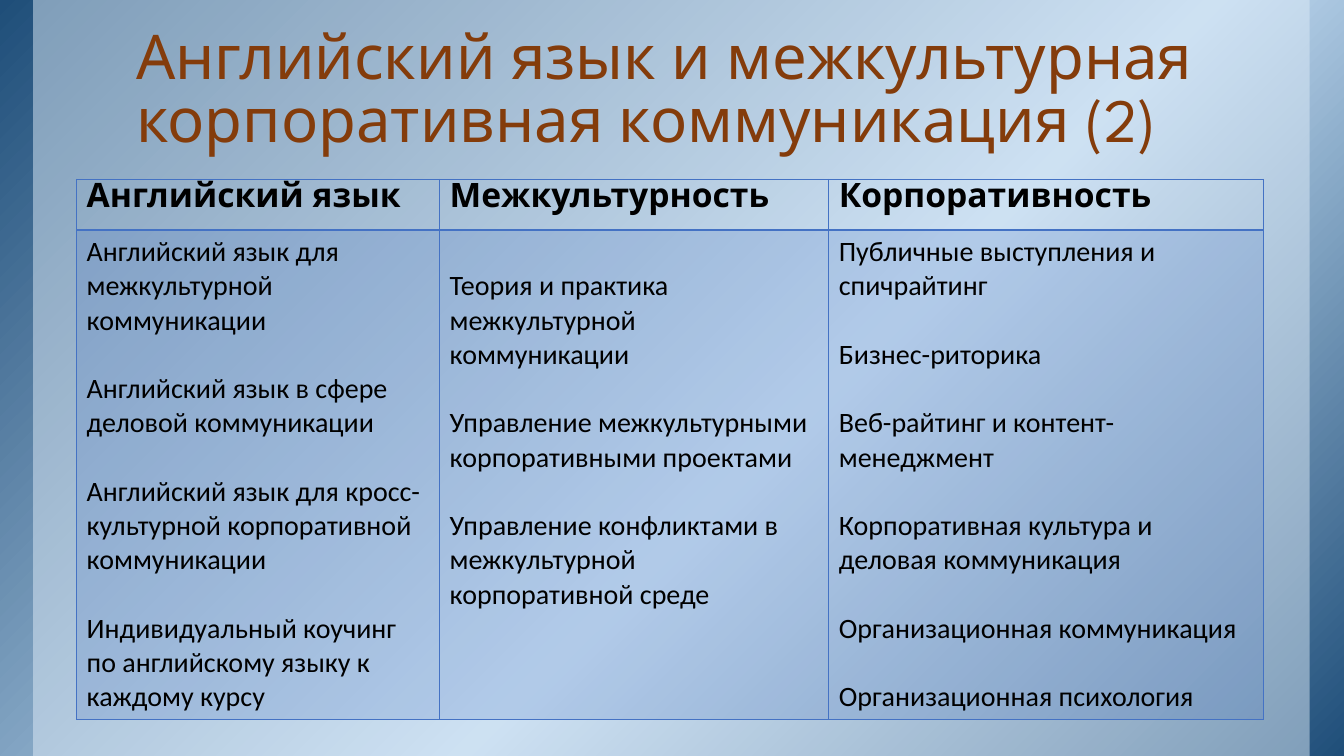
from lxml import etree
from pptx import Presentation
from pptx.dml.color import RGBColor
from pptx.enum.shapes import MSO_SHAPE
from pptx.enum.text import MSO_ANCHOR
from pptx.oxml import parse_xml
from pptx.oxml.ns import nsdecls, qn
from pptx.util import Inches, Pt

TITLE = "Английский язык и межкультурная корпоративная коммуникация (2)"
COLUMNS = [
    (3.6, "Английский язык", 0.05, [
        "Английский язык для межкультурной коммуникации",
        "Английский язык в сфере деловой коммуникации",
        "Английский язык для кросс-культурной корпоративной коммуникации",
        "Индивидуальный коучинг по английскому языку к каждому курсу",
    ]),
    (3.86, "Межкультурность", 0.39, [
        "Теория и практика межкультурной коммуникации",
        "Управление межкультурными корпоративными проектами",
        "Управление конфликтами в межкультурной корпоративной среде",
    ]),
    (4.31, "Корпоративность", 0.05, [
        "Публичные выступления и спичрайтинг",
        "Бизнес-риторика",
        "Веб-райтинг и контент-менеджмент",
        "Корпоративная культура и деловая коммуникация",
        "Организационная коммуникация",
        "Организационная психология",
    ]),
]


def color(value):
    return RGBColor.from_string(value)


class CourseSlide:
    heading_font = "League Spartan"
    body_font = "Calibri"
    accent = "4472C4"

    def __init__(self, deck):
        self.slide = deck.slides.add_slide(deck.slide_layouts[6])

    def set_alpha(self, properties, percent):
        tint = properties.find(qn("a:solidFill"))[0]
        etree.SubElement(tint, qn("a:alpha")).set("val", str(percent * 1000))

    def panel(self, left, width, fill):
        shape = self.slide.shapes.add_shape(
            MSO_SHAPE.RECTANGLE, Inches(left), 0, Inches(width), Inches(7.5))
        shape.shadow.inherit = False
        shape.line.fill.background()
        shape.fill.solid()
        shape.fill.fore_color.rgb = color(fill)
        return shape

    def gradient_panel(self, left, width, stops, angle):
        shape = self.panel(left, width, stops[0][1])
        stop_xml = "".join(
            f'<a:gs pos="{position * 1000}"><a:srgbClr val="{value}"/></a:gs>'
            for position, value in stops)
        gradient = parse_xml(
            f'<a:gradFill {nsdecls("a")} rotWithShape="1"><a:gsLst>{stop_xml}</a:gsLst>'
            f'<a:lin ang="{angle * 60000}" scaled="0"/></a:gradFill>')
        properties = shape.element.spPr
        properties.replace(properties.find(qn("a:solidFill")), gradient)

    def clear_panel(self, left, width, fill, percent):
        self.set_alpha(self.panel(left, width, fill).element.spPr, percent)

    def set_text(self, frame, lines, font, size, ink, bold=False, gap=0, spacing=None):
        for index, line in enumerate(lines):
            para = frame.paragraphs[0] if index == 0 else frame.add_paragraph()
            para.text = line
            if index and gap:
                para.space_before = Pt(gap)
            if spacing:
                para.line_spacing = spacing
            for span in para.runs:
                span.font.name = font
                span.font.size = Pt(size)
                span.font.bold = bold
                span.font.color.rgb = color(ink)

    def title(self, text):
        box = self.slide.shapes.add_textbox(
            Inches(1.22), Inches(0.08), Inches(11.11), Inches(1.53))
        frame = box.text_frame
        frame.word_wrap = True
        frame.vertical_anchor = MSO_ANCHOR.BOTTOM
        frame.margin_left = frame.margin_right = Inches(0.13)
        frame.margin_top = frame.margin_bottom = Inches(0.07)
        self.set_text(frame, [text], self.heading_font, 44, "843C0B", spacing=0.85)

    def borders(self, properties, widths):
        for index, (side, width) in enumerate(widths.items()):
            properties.insert(index, parse_xml(
                f'<a:{side} {nsdecls("a")} w="{int(Pt(width))}"><a:solidFill>'
                f'<a:srgbClr val="{self.accent}"/></a:solidFill></a:{side}>'))

    def table(self, columns):
        holder = self.slide.shapes.add_table(
            2, len(columns), Inches(0.76), Inches(1.78),
            Inches(sum(column[0] for column in columns)), Inches(5.33))
        table = holder.table
        table.horz_banding = False
        table.rows[0].height = Inches(0.47)
        table.rows[1].height = Inches(4.86)
        for index, (width, heading, top, courses) in enumerate(columns):
            table.columns[index].width = Inches(width)
            head, body = table.cell(0, index), table.cell(1, index)
            head.fill.background()
            body.fill.solid()
            body.fill.fore_color.rgb = color(self.accent)
            body.margin_top = Inches(top)
            self.set_text(head.text_frame, [heading], self.heading_font, 24, "000000", bold=True)
            self.set_text(body.text_frame, courses, self.body_font, 20, "000000", gap=24.4)
            head_properties, body_properties = (
                cell.text_frame._txBody.getparent().find(qn("a:tcPr")) for cell in (head, body))
            self.set_alpha(body_properties, 20)
            self.borders(head_properties, {"lnL": 1, "lnR": 1, "lnT": 1, "lnB": 2})
            self.borders(body_properties, {"lnL": 1, "lnR": 1, "lnT": 2, "lnB": 1})


def main():
    deck = Presentation()
    deck.slide_width = Inches(13.33)
    deck.slide_height = Inches(7.5)
    page = CourseSlide(deck)
    page.gradient_panel(0, 13.33, [(0, "1F4E79"), (58, "BDD7EE"), (100, "1F4E79")], 45)
    page.clear_panel(0.33, 12.66, "DEEBF7", 50)
    page.title(TITLE)
    page.table(COLUMNS)
    deck.save("out.pptx")


if __name__ == "__main__":
    main()
